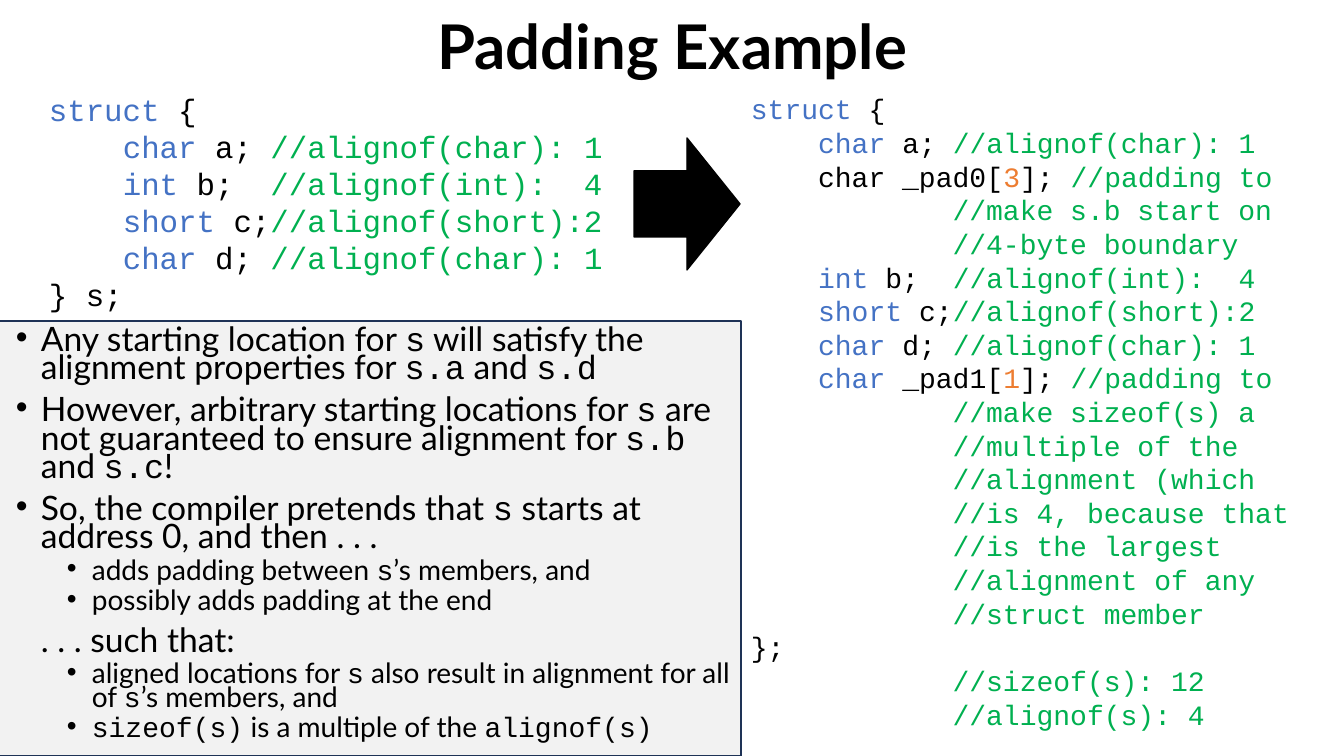
from pptx import Presentation
from pptx.dml.color import RGBColor
from pptx.enum.shapes import MSO_SHAPE
from pptx.enum.text import MSO_ANCHOR, PP_ALIGN
from pptx.oxml.ns import qn
from pptx.util import Pt
from lxml import etree

PX = 914400 / 100.8
RECTANGLE, RIGHT_ARROW = MSO_SHAPE.RECTANGLE, MSO_SHAPE.RIGHT_ARROW
MIDDLE, CENTER = MSO_ANCHOR.MIDDLE, PP_ALIGN.CENTER
PROSE_FONT, CODE_FONT = "Lato", "Courier New"
BLACK, KEYWORD, COMMENT, NUMBER = "000000", "4472C4", "00B050", "ED7D31"
PANEL_FILL, PANEL_LINE = "F2F2F2", "1E3256"
CODE_CHAR_WIDTH = 0.6  # advance of a Courier New character, in ems


def member(kind, name, note):
    return 4, (kind, KEYWORD), (name, BLACK), (note, COMMENT)


def padding(kind_color, name, count):
    return (4, ("char", kind_color), (f" {name}[", BLACK), (count, NUMBER),
            ("]; ", BLACK), ("//padding to", COMMENT))


def notes(*lines):
    return [(12, (line, COMMENT)) for line in lines]


# Each code line: indent in characters, then coloured spans
OPENING = (0, ("struct", KEYWORD), (" {", BLACK))
FIRST_MEMBER = member("char", " a; ", "//alignof(char): 1")
OTHER_MEMBERS = [
    member("int", " b;  ", "//alignof(int):  4"),
    member("short", " c;", "//alignof(short):2"),
    member("char", " d; ", "//alignof(char): 1"),
]
PLAIN_STRUCT = [OPENING, FIRST_MEMBER, *OTHER_MEMBERS, (0, ("} s;", BLACK))]
PADDED_STRUCT = [
    OPENING,
    FIRST_MEMBER,
    padding(BLACK, "_pad0", "3"),
    *notes("//make s.b start on", "//4-byte boundary"),
    *OTHER_MEMBERS,
    padding(KEYWORD, "_pad1", "1"),
    *notes("//make sizeof(s) a", "//multiple of the", "//alignment (which",
           "//is 4, because that", "//is the largest", "//alignment of any",
           "//struct member"),
    (0, ("};", BLACK)),
    *notes("//sizeof(s): 12", "//alignof(s): 4"),
]

# Each point: level, bulleted or not, text with code between backticks
POINTS = [
    (0, True, "Any starting location for `s` will satisfy the alignment "
              "properties for `s.a` and `s.d`"),
    (0, True, "However, arbitrary starting locations for `s` are not guaranteed "
              "to ensure alignment for `s.b` and `s.c`!"),
    (0, True, "So, the compiler pretends that `s` starts at address 0, "
              "and then . . ."),
    (1, True, "adds padding between `s`’s members, and"),
    (1, True, "possibly adds padding at the end"),
    (0, False, ". . . such that:"),
    (1, True, "aligned locations for `s` also result in alignment for all of "
              "`s`’s members, and"),
    (1, True, "`sizeof(s)` is a multiple of the `alignof(s)`"),
]


def px(length):
    return round(length * PX)


def color(hex_string):
    return RGBColor.from_string(hex_string)


def add_block(page, kind, bounds, fill, line):
    block = page.shapes.add_shape(kind, *map(px, bounds))
    block.shadow.inherit = False
    block.fill.solid()
    block.fill.fore_color.rgb = color(fill)
    block.line.color.rgb = color(line)
    block.line.width = Pt(1)


def add_text_frame(page, bounds):
    frame = page.shapes.add_textbox(*map(px, bounds)).text_frame
    frame.word_wrap = True
    return frame


def paragraphs(frame, items):
    """Yield a paragraph of the frame with each item."""
    for index, item in enumerate(items):
        yield frame.add_paragraph() if index else frame.paragraphs[0], item


def add_span(para, text, font, size, hex_string, bold=False):
    span = para.add_run()
    span.text = text
    span.font.name = font
    span.font.size = Pt(size)
    span.font.bold = bold
    span.font.color.rgb = color(hex_string)


def set_indent(para, left, first=0):
    properties = para._p.get_or_add_pPr()
    properties.set("marL", str(left))
    properties.set("indent", str(first))
    return properties


def add_title(page, text, bounds):
    frame = add_text_frame(page, bounds)
    frame.vertical_anchor = MIDDLE
    para = frame.paragraphs[0]
    para.alignment = CENTER
    para.line_spacing = 0.9
    add_span(para, text, PROSE_FONT, 44, BLACK, bold=True)


def add_code(page, lines, bounds, size):
    frame = add_text_frame(page, bounds)
    for para, (indent, *spans) in paragraphs(frame, lines):
        set_indent(para, Pt(indent * CODE_CHAR_WIDTH * size))
        for text, hex_string in spans:
            add_span(para, text, CODE_FONT, size, hex_string)


def add_points(page, points, bounds):
    frame = add_text_frame(page, bounds)
    for para, (level, bulleted, text) in paragraphs(frame, points):
        para.level = level
        para.line_spacing = 0.7
        para.space_before = Pt(5 if level else 10)
        hanging = px(25)
        properties = set_indent(para, px(76 if level else 25),
                                -hanging if bulleted else 0)
        if bulleted:
            etree.SubElement(properties, qn("a:buFont")).set("typeface", "Arial")
            etree.SubElement(properties, qn("a:buChar")).set("char", "•")
        for index, part in enumerate(text.split("`")):
            if part:
                font = CODE_FONT if index % 2 else PROSE_FONT
                add_span(para, part, font, 20 if level else 24, BLACK)


def main():
    deck = Presentation()
    deck.slide_width, deck.slide_height = px(1344), px(756)
    page = deck.slides.add_slide(deck.slide_layouts[6])
    add_block(page, RECTANGLE, (-6, 321, 747, 435), PANEL_FILL, PANEL_LINE)
    add_title(page, "Padding Example", (93, 1, 1159, 98))
    add_code(page, PLAIN_STRUCT, (39, 86, 617, 234), 22)
    add_points(page, POINTS, (6, 324, 743, 432))
    add_code(page, PADDED_STRUCT, (741, 87, 617, 655), 20)
    add_block(page, RIGHT_ARROW, (634, 138, 106, 132), BLACK, BLACK)
    deck.save("out.pptx")


if __name__ == "__main__":
    main()
